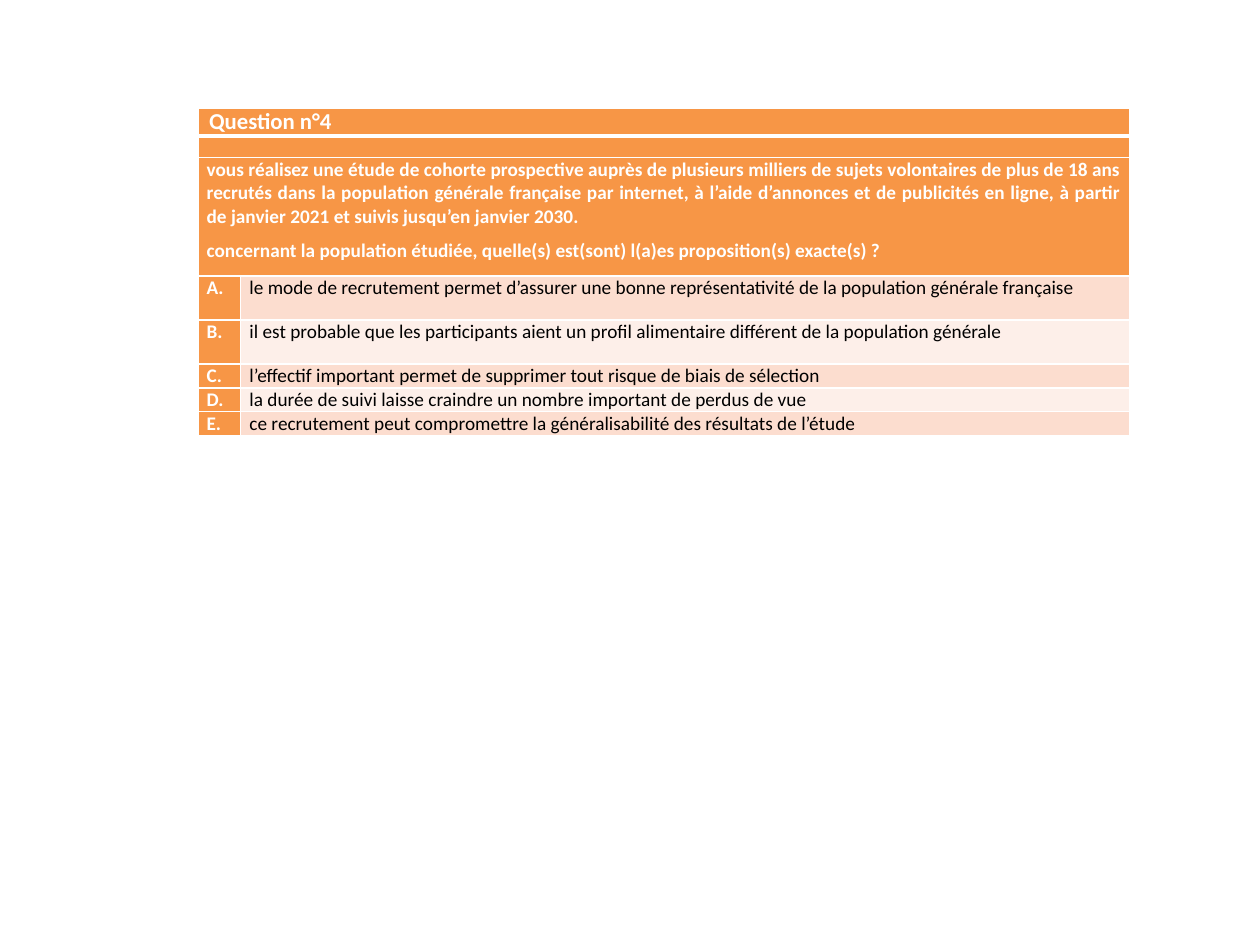
import pptx
import pptx.util
import pptx.dml.color
import pptx.enum.text
import pptx.oxml.ns
import lxml.etree

WIDE, HIGH = 10, 7.5
ORANGE, WHITE, BLACK = "F79646", "FFFFFF", "000000"
BANDS = ["FCDDCF", "FDEFE9"]
COLS = [0.34, 7.06]
HEAD_ROWS = [0.2, 0.17, 0.94]
ROWS = HEAD_ROWS + [0.35, 0.35, 0.17, 0.17, 0.17]

TITLE = "Question n°4"
STEM = [
    "vous réalisez une étude de cohorte prospective auprès de plusieurs milliers de sujets "
    "volontaires de plus de 18 ans recrutés dans la population générale française par internet, "
    "à l’aide d’annonces et de publicités en ligne, à partir de janvier 2021 et suivis "
    "jusqu’en janvier 2030. ",
    "concernant la population étudiée, quelle(s) est(sont) l(a)es proposition(s) exacte(s)\u00a0?",
]
CHOICES = [
    "le mode de recrutement permet d’assurer une bonne représentativité de la population générale française",
    "il est probable que les participants aient un profil alimentaire différent de la population générale",
    "l’effectif important permet de supprimer tout risque de biais de sélection",
    "la durée de suivi laisse craindre un nombre important de perdus de vue",
    "ce recrutement peut compromettre la généralisabilité des résultats de l’étude",
]


def inch(size):
    return pptx.util.Inches(size)


def color(code):
    return pptx.dml.color.RGBColor.from_string(code)


def node(parent, tag, **attrs):
    return lxml.etree.SubElement(parent, pptx.oxml.ns.qn(tag), **attrs)


def edge(cell, bottom=1):
    """White borders; they must come before the fill."""
    props = cell._tc.get_or_add_tcPr()
    for side, width in zip("LRTB", [1, 1, 1, bottom]):
        line = node(props, "a:ln" + side, w=str(pptx.util.Pt(width)))
        node(node(line, "a:solidFill"), "a:srgbClr", val=WHITE)


def paint(cell, fill, bottom=1):
    edge(cell, bottom)
    cell.fill.solid()
    cell.fill.fore_color.rgb = color(fill)
    cell.margin_left = cell.margin_right = inch(0.07)
    cell.margin_top = cell.margin_bottom = 0


def write(cell, texts, ink=WHITE, bold=True, size=11, justify=False):
    frame = cell.text_frame
    frame.text = "\n".join(texts)
    for para in frame.paragraphs:
        if justify:
            para.alignment = pptx.enum.text.PP_ALIGN.JUSTIFY
        font = para.font
        font.name, font.size, font.bold = "Calibri", pptx.util.Pt(size), bold
        font.color.rgb = color(ink)


def band(table, row, bottom=1):
    """One orange cell across both columns."""
    cell = table.cell(row, 0)
    cell.merge(table.cell(row, 1))
    for col in range(2):
        paint(table.cell(row, col), ORANGE, bottom)
    return cell


def make(slide):
    frame = slide.shapes.add_table(len(ROWS), len(COLS), inch(1.57), inch(0.86),
                                   inch(sum(COLS)), inch(sum(ROWS)))
    table = frame.table
    for col, width in zip(table.columns, COLS):
        col.width = inch(width)
    for row, height in zip(table.rows, ROWS):
        row.height = inch(height)
    return table


def head(table):
    # Title
    cell = band(table, 0, bottom=3)
    write(cell, [TITLE], size=13, justify=True)
    cell.text_frame.paragraphs[0]._p.get_or_add_pPr().set("marL", str(inch(0.02)))
    # Thin empty band
    for cell in (band(table, 1), table.cell(1, 1)):
        node(cell.text_frame.paragraphs[0]._p, "a:endParaRPr", sz="900")
    # Question
    cell = band(table, 2)
    write(cell, STEM, justify=True)
    last = cell.text_frame.paragraphs[-1]
    last.space_before = last.space_after = pptx.util.Pt(6)


def choices(table):
    for num, text in enumerate(CHOICES):
        mark, body = table.rows[len(HEAD_ROWS) + num].cells
        paint(mark, ORANGE)
        write(mark, ["ABCDE"[num] + "."])
        paint(body, BANDS[num % 2])
        write(body, [text], ink=BLACK, bold=False)


def main():
    deck = pptx.Presentation()
    deck.slide_width, deck.slide_height = inch(WIDE), inch(HIGH)
    slide = deck.slides.add_slide(deck.slide_layouts[6])
    table = make(slide)
    head(table)
    choices(table)
    deck.save("out.pptx")


if __name__ == "__main__":
    main()
